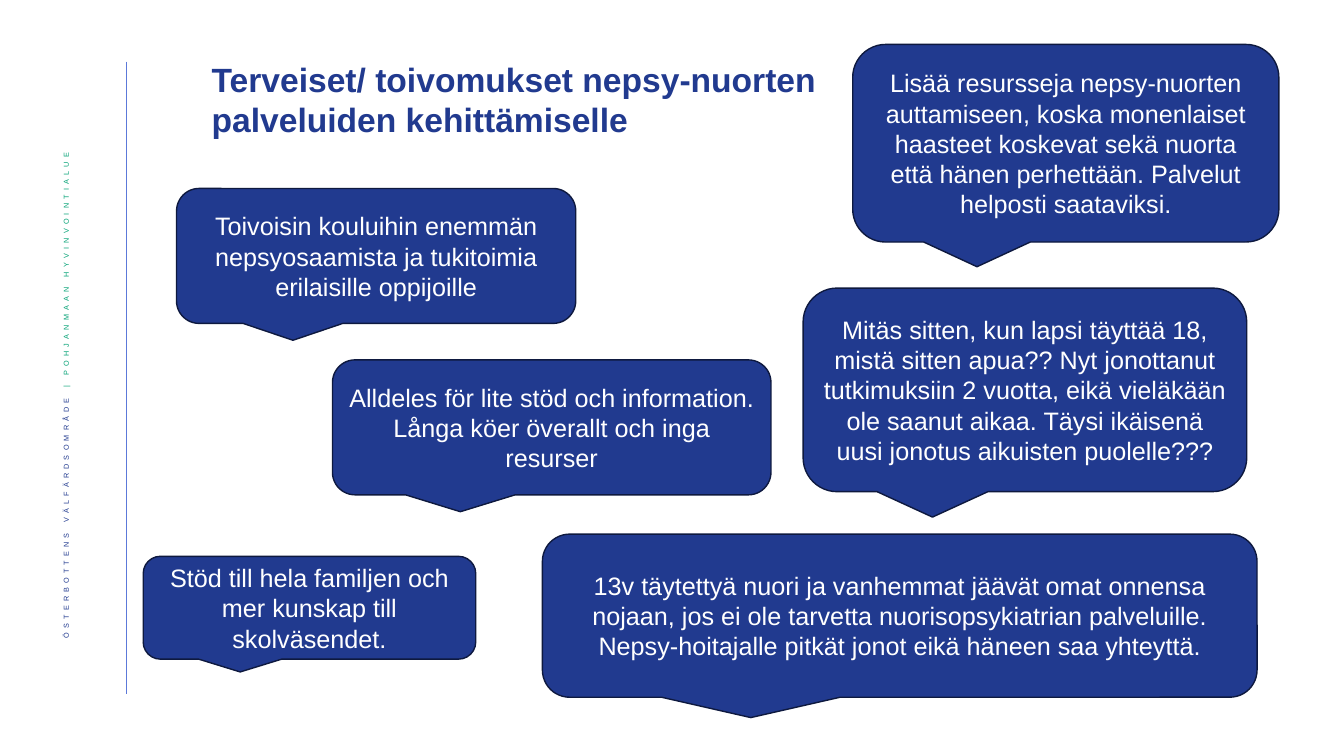
from pptx import Presentation
from pptx.dml.color import RGBColor
from pptx.enum.shapes import MSO_CONNECTOR, MSO_SHAPE
from pptx.enum.text import MSO_ANCHOR, MSO_AUTO_SIZE, PP_ALIGN
from pptx.oxml.ns import qn
from pptx.util import Cm, Pt
from lxml.etree import SubElement

THEME = {
    "font": "Arial",
    "navy": RGBColor(0x21, 0x3A, 0x8F),
    "outline": RGBColor(0x0E, 0x19, 0x3F),
    "rule": RGBColor(0x5C, 0x79, 0xD9),
    "green": RGBColor(0x00, 0xA1, 0x74),
    "white": RGBColor(0xFF, 0xFF, 0xFF),
    "title_size": Pt(24),
    "quote_size": Pt(18),
    "sidebar_size": Pt(9),
}


def set_font(font, size, color, bold=False):
    font.name = THEME["font"]
    font.size = size
    font.bold = bold
    font.color.rgb = color


prs = Presentation()
prs.slide_width, prs.slide_height = Cm(33.87), Cm(19.05)
s = prs.slides.add_slide(prs.slide_layouts[5])

# Vertical rule
rule = s.shapes.add_connector(MSO_CONNECTOR.STRAIGHT, Cm(3.18), Cm(1.55), Cm(3.18), Cm(17.48))
rule.line.color.rgb = THEME["rule"]
rule.line.width = Pt(0.5)
SubElement(rule._element.spPr, qn("a:effectLst"))

# Sidebar with the organisation name, read upwards
sidebar = s.shapes.add_textbox(Cm(1.07), Cm(3.61), Cm(1.32), Cm(14.55))
tf = sidebar.text_frame
tf.word_wrap = True
tf.vertical_anchor = MSO_ANCHOR.MIDDLE
tf._txBody.bodyPr.set("vert", "vert270")
p = tf.paragraphs[0]
p.alignment = PP_ALIGN.RIGHT
p.line_spacing = 0.9
for text, color in [("ÖSTERBOTTENS VÄLFÄRDSOMRÅDE ", "navy"),
                    ("| POHJANMAAN HYVINVOINTIALUE", "green")]:
    r = p.add_run()
    r.text = text
    set_font(r.font, THEME["sidebar_size"], THEME[color])
    rPr = r._r.get_or_add_rPr()
    rPr.set("baseline", "30000")
    rPr.set("spc", "300")

# Title
title = s.shapes.title
title.left, title.top, title.width, title.height = Cm(5.08), Cm(1.35), Cm(17.17), Cm(2.31)
tf = title.text_frame
tf.text = "Terveiset/ toivomukset nepsy-nuorten palveluiden kehittämiselle"
tf.word_wrap = True
tf.auto_size = MSO_AUTO_SIZE.SHAPE_TO_FIT_TEXT
tf.vertical_anchor = MSO_ANCHOR.TOP
p = tf.paragraphs[0]
p.alignment = PP_ALIGN.LEFT
set_font(p.font, THEME["title_size"], THEME["navy"], bold=True)

# Speech bubbles: left, top, width, height in cm, then the quote
quotes = [
    (21.49, 1.12, 10.74, 4.98,
     "Lisää resursseja nepsy-nuorten auttamiseen, koska monenlaiset haasteet koskevat "
     "sekä nuorta että hänen perhettään. Palvelut helposti saataviksi."),
    (4.45, 4.75, 10.06, 3.4,
     "Toivoisin kouluihin enemmän nepsyosaamista ja tukitoimia erilaisille oppijoille"),
    (8.38, 9.07, 11.05, 3.4,
     "Alldeles för lite stöd och information. Långa köer överallt och inga resurser"),
    (20.24, 7.26, 11.18, 5.13,
     "Mitäs sitten, kun lapsi täyttää 18, mistä sitten apua?? Nyt jonottanut tutkimuksiin "
     "2 vuotta, eikä vieläkään ole saanut aikaa. Täysi ikäisenä uusi jonotus aikuisten "
     "puolelle???"),
    (3.61, 14.02, 8.38, 2.59,
     "Stöd till hela familjen och mer kunskap till skolväsendet."),
    (13.67, 13.46, 18.01, 4.11,
     "13v täytettyä nuori ja vanhemmat jäävät omat onnensa nojaan, jos ei ole tarvetta "
     "nuorisopsykiatrian palveluille. Nepsy-hoitajalle pitkät jonot eikä häneen saa yhteyttä."),
]
for *box, quote in quotes:
    sp = s.shapes.add_shape(MSO_SHAPE.ROUNDED_RECTANGULAR_CALLOUT, *map(Cm, box))
    sp.shadow.inherit = False
    sp.fill.solid()
    sp.fill.fore_color.rgb = THEME["navy"]
    sp.line.color.rgb = THEME["outline"]
    sp.line.width = Pt(1)
    tf = sp.text_frame
    tf.text = quote
    tf.word_wrap = True
    tf.vertical_anchor = MSO_ANCHOR.MIDDLE
    p = tf.paragraphs[0]
    p.alignment = PP_ALIGN.CENTER
    set_font(p.font, THEME["quote_size"], THEME["white"])

prs.save("out.pptx")
